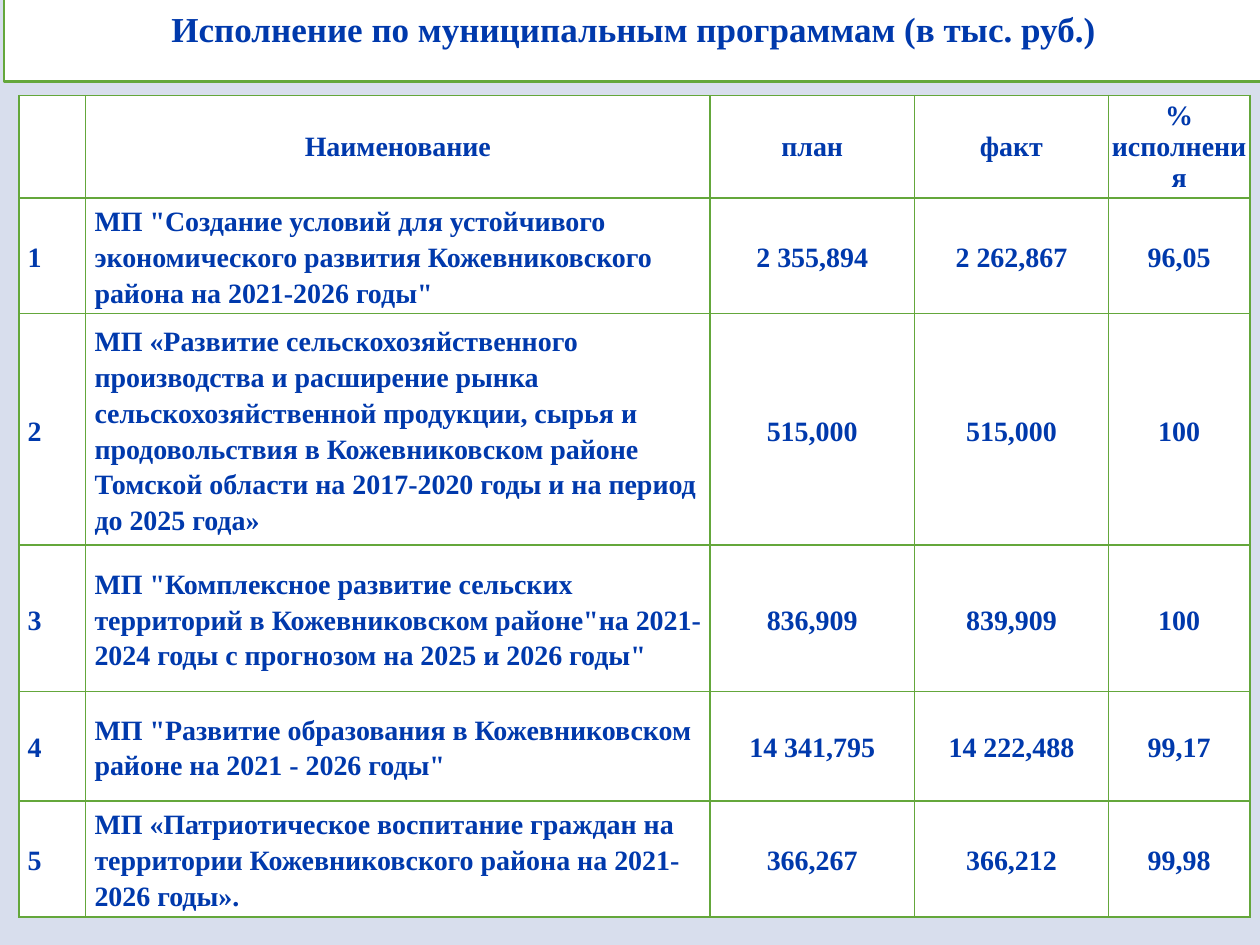
from lxml import etree
from pptx import Presentation, util as u
from pptx.dml.color import RGBColor
from pptx.enum import text
from pptx.oxml import ns

BLUE, GREEN, WHITE, BACKDROP = "0039AC", "64A73B", "FFFFFF", "D8DEED"
LEFT, CENTER = text.PP_ALIGN.LEFT, text.PP_ALIGN.CENTER
MIDDLE = text.MSO_ANCHOR.MIDDLE

HEADINGS = ["", "Наименование", "план", "факт", "% исполнения"]
PROGRAMS = [
    ["1", 'МП "Создание условий для устойчивого экономического развития '
     'Кожевниковского района на 2021-2026 годы"', "2 355,894", "2 262,867", "96,05"],
    ["2", "МП «Развитие сельскохозяйственного производства и расширение рынка "
     "сельскохозяйственной продукции, сырья и продовольствия в Кожевниковском районе "
     "Томской области на 2017-2020 годы и на период до 2025 года»",
     "515,000", "515,000", "100"],
    ["3", 'МП "Комплексное развитие сельских территорий в Кожевниковском районе"на '
     '2021-2024 годы с прогнозом на 2025 и 2026 годы"', "836,909", "839,909", "100"],
    ["4", 'МП "Развитие образования в Кожевниковском районе на 2021 - 2026 годы"',
     "14 341,795", "14 222,488", "99,17"],
    ["5", "МП «Патриотическое воспитание граждан на территории Кожевниковского района "
     "на 2021-2026 годы».", "366,267", "366,212", "99,98"],
]
COLUMNS = [0.53, 4.95, 1.62, 1.54, 1.12]
ROWS = [0.76, 0.87, 1.73, 1.16, 0.87, 0.75]
HEADING_MARGINS = (0.01, 0.01, 0.01, 0)
PROGRAM_MARGINS = (0.07, 0, 0.07, 0)


def paint(color_format, value):
    color_format.rgb = RGBColor.from_string(value)


def fill_with(fill, value):
    fill.solid()
    paint(fill.fore_color, value)


def apply(target, formats):
    for name, value in formats.items():
        setattr(target, name, value)


def write(paragraph, words, size, align, spacing):
    run = paragraph.add_run()
    run.text = words
    apply(paragraph, {"alignment": align, "line_spacing": spacing})
    apply(run.font, {"name": "Times New Roman", "size": u.Pt(size), "bold": True})
    paint(run.font.color, BLUE)


def outline_cell(cell, value, width):
    properties = cell._tc.get_or_add_tcPr()
    for index, side in enumerate(("a:lnL", "a:lnR", "a:lnT", "a:lnB")):
        border = etree.Element(ns.qn(side), w=str(u.Pt(width)))
        solid = etree.SubElement(border, ns.qn("a:solidFill"))
        etree.SubElement(solid, ns.qn("a:srgbClr"), val=value)
        properties.insert(index, border)


def place_heading(slide, left, top, width, height):
    heading = slide.shapes.title
    apply(heading, {"left": u.Inches(left), "top": u.Inches(top),
                    "width": u.Inches(width), "height": u.Inches(height)})
    fill_with(heading.fill, WHITE)
    paint(heading.line.color, GREEN)
    heading.line.width = u.Pt(1.25)
    apply(heading.text_frame, {"word_wrap": True, "vertical_anchor": MIDDLE,
                               "auto_size": text.MSO_AUTO_SIZE.SHAPE_TO_FIT_TEXT})
    write(heading.text_frame.paragraphs[0],
          "Исполнение по муниципальным программам (в тыс. руб.)", 20, CENTER, 1.0)


def fill_cell(cell, words, is_heading, align):
    margins = HEADING_MARGINS if is_heading else PROGRAM_MARGINS
    sides = ("margin_left", "margin_top", "margin_right", "margin_bottom")
    apply(cell, {side: u.Inches(margin) for side, margin in zip(sides, margins)})
    cell.vertical_anchor = MIDDLE
    fill_with(cell.fill, WHITE)
    outline_cell(cell, GREEN, 1)
    if words:
        write(cell.text_frame.paragraphs[0], words, 16, align,
              1.0 if is_heading else 1.15)


def place_programs(slide, left, top, width, height):
    records = [HEADINGS] + PROGRAMS
    programs = slide.shapes.add_table(
        len(records), len(HEADINGS), u.Inches(left), u.Inches(top),
        u.Inches(width), u.Inches(height)).table
    apply(programs, {"first_row": False, "horz_banding": False})
    # Column and row shares are scaled to the given box
    for column, share in zip(programs.columns, COLUMNS):
        column.width = u.Inches(width * share / sum(COLUMNS))
    for row, share in zip(programs.rows, ROWS):
        row.height = u.Inches(height * share / sum(ROWS))
    for r, record in enumerate(records):
        for c, words in enumerate(record):
            align = CENTER if r == 0 or c > 1 else LEFT
            fill_cell(programs.cell(r, c), words, r == 0, align)


def main():
    deck = Presentation()
    apply(deck, {"slide_width": u.Inches(10), "slide_height": u.Inches(7.5)})
    slide = deck.slides.add_slide(deck.slide_layouts[5])
    fill_with(slide.background.fill, BACKDROP)
    place_heading(slide, 0.03, 0.01, 10, 0.44)
    place_programs(slide, 0.15, 0.76, 9.77, sum(ROWS))
    deck.save("out.pptx")


if __name__ == "__main__":
    main()
